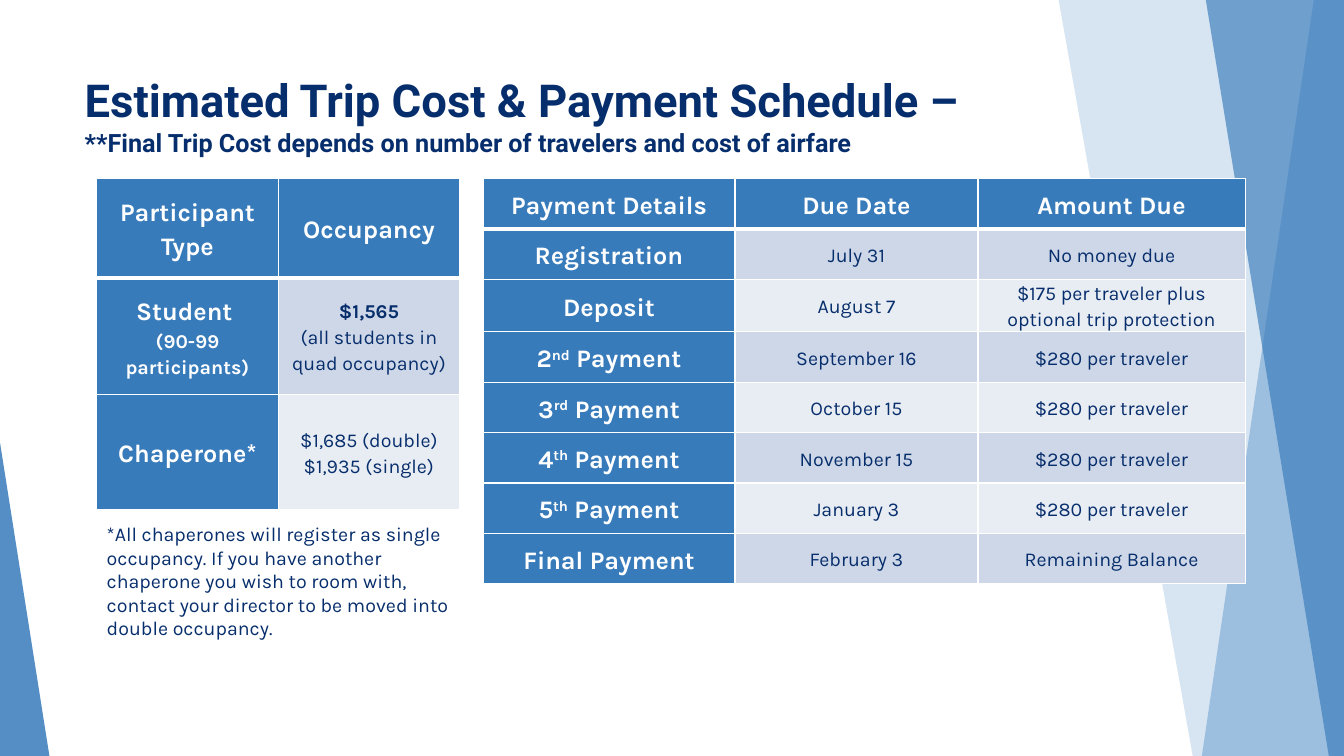
from copy import deepcopy
from dataclasses import dataclass

from lxml import etree
from pptx import Presentation
from pptx.dml.color import RGBColor
from pptx.enum.shapes import MSO_SHAPE
from pptx.enum.text import MSO_ANCHOR, PP_ALIGN
from pptx.oxml.ns import qn
from pptx.util import Inches, Pt

TRIANGLE = MSO_SHAPE.ISOSCELES_TRIANGLE
TOP, MIDDLE = MSO_ANCHOR.TOP, MSO_ANCHOR.MIDDLE
LEFT, CENTER = PP_ALIGN.LEFT, PP_ALIGN.CENTER


@dataclass(frozen=True)
class Theme:
    blue: str = "387BBB"
    sky: str = "84B0DA"
    navy: str = "072E6C"
    white: str = "FFFFFF"
    bands: tuple = ("CED7E7", "E8ECF3")
    title_font: str = "Roboto"
    body_font: str = "Karla"
    title_size: float = 32.4
    heading_size: float = 18
    body_size: float = 14


@dataclass(frozen=True)
class Span:
    text: str
    size: float
    color: str
    bold: bool = False
    raised: bool = False


class SlideBuilder:
    def __init__(self, page, theme):
        self.page = page
        self.theme = theme

    def heading(self, text, size=None, raised=False):
        return Span(text, size or self.theme.heading_size, self.theme.white, True, raised)

    def body(self, text, bold=False):
        return Span(text, self.theme.body_size, self.theme.navy, bold)

    def add_spans(self, para, spans, font_name, align=LEFT, spacing=1.0):
        para.alignment = align
        para.line_spacing = spacing
        for span in spans:
            for index, line in enumerate(span.text.split("\n")):
                if index:
                    # The break takes the style of the run before it
                    para.add_line_break()
                    para._p[-1].append(deepcopy(run._r.rPr))
                if not line:
                    continue
                run = para.add_run()
                run.text = line
                run.font.name = font_name
                run.font.size = Pt(span.size)
                run.font.bold = span.bold
                run.font.color.rgb = RGBColor.from_string(span.color)
                if span.raised:
                    run._r.get_or_add_rPr().set("baseline", "30000")

    def paint(self, shape, color, opacity):
        shape.shadow.inherit = False
        shape.line.fill.background()
        shape.fill.solid()
        shape.fill.fore_color.rgb = RGBColor.from_string(color)
        color_node = shape._element.spPr.find(qn("a:solidFill"))[0]
        etree.SubElement(color_node, qn("a:alpha")).set("val", str(opacity * 1000))

    def polygon(self, points, color, opacity):
        start, *others = [(Inches(x), Inches(y)) for x, y in points]
        outline = self.page.shapes.build_freeform(*start)
        outline.add_line_segments(others, close=True)
        self.paint(outline.convert_to_shape(), color, opacity)

    def corner_triangle(self, left, top, width, height, color, opacity):
        shape = self.page.shapes.add_shape(
            TRIANGLE, Inches(left), Inches(top), Inches(width), Inches(height))
        shape.adjustments[0] = 0
        self.paint(shape, color, opacity)

    def title(self, left, top, width, height, spans):
        box = self.page.shapes.title
        box.left, box.top = Inches(left), Inches(top)
        box.width, box.height = Inches(width), Inches(height)
        box.text_frame.vertical_anchor = TOP
        box.text_frame.word_wrap = True
        self.add_spans(box.text_frame.paragraphs[0], spans, self.theme.title_font)

    def note(self, left, top, width, height, text):
        box = self.page.shapes.add_textbox(
            Inches(left), Inches(top), Inches(width), Inches(height))
        box.text_frame.word_wrap = True
        self.add_spans(box.text_frame.paragraphs[0], [self.body(text)], self.theme.body_font)

    def border(self, cell, side, width):
        line = etree.SubElement(cell._tc.get_or_add_tcPr(), qn(f"a:ln{side}"))
        line.set("w", str(Pt(width)))
        fill = etree.SubElement(line, qn("a:solidFill"))
        etree.SubElement(fill, qn("a:srgbClr")).set("val", self.theme.white)

    def cell(self, cell, paragraphs, row, column):
        theme = self.theme
        cell.vertical_anchor = MIDDLE
        cell.margin_left = cell.margin_right = Inches(0.07)
        cell.margin_top = cell.margin_bottom = 0
        # The rule under the header row is thicker
        widths = {"L": 1, "R": 1, "T": 3 if row == 1 else 1, "B": 3 if row == 0 else 1}
        for side, width in widths.items():
            self.border(cell, side, width)
        is_heading = row == 0 or column == 0
        color = theme.blue if is_heading else theme.bands[(row - 1) % 2]
        cell.fill.solid()
        cell.fill.fore_color.rgb = RGBColor.from_string(color)
        frame = cell.text_frame
        for index, spans in enumerate(paragraphs):
            para = frame.add_paragraph() if index else frame.paragraphs[0]
            self.add_spans(para, spans, theme.body_font, CENTER, 1.15)

    def table(self, left, top, widths, heights, rows):
        table = self.page.shapes.add_table(
            len(heights), len(widths), Inches(left), Inches(top),
            Inches(sum(widths)), Inches(sum(heights))).table
        table.horz_banding = False
        for column, width in enumerate(widths):
            table.columns[column].width = Inches(width)
        for row, (height, contents) in enumerate(zip(heights, rows)):
            table.rows[row].height = Inches(height)
            for column, paragraphs in enumerate(contents):
                self.cell(table.cell(row, column), paragraphs, row, column)


def main():
    theme = Theme()
    deck = Presentation()
    deck.slide_width, deck.slide_height = Inches(13.33), Inches(7.5)
    slide = SlideBuilder(deck.slides.add_slide(deck.slide_layouts[5]), theme)
    heading, body = slide.heading, slide.body

    # Angled background bands
    for top_left, bottom_left, color, opacity in [
        (10.5, 11.83, theme.blue, 20),
        (13.03, 11.92, theme.sky, 70),
        (11.96, 13.18, theme.blue, 65),
    ]:
        slide.polygon([(top_left, 0), (13.33, 0), (13.33, 7.5), (bottom_left, 7.5)],
                      color, opacity)
    slide.corner_triangle(0, 4.39, 0.49, 3.11, theme.blue, 85)

    # Title
    slide.title(0.74, 0.67, 9.76, 1.44, [
        Span("Estimated Trip Cost & Payment Schedule –\n", theme.title_size, theme.navy, True),
        Span("**Final Trip Cost depends on number of travelers and cost of airfare",
             theme.heading_size, theme.navy, True),
    ])

    # Trip cost by participant
    costs = [
        [[[heading("Participant Type")]], [[heading("Occupancy")]]],
        [[[heading("Student ")], [heading("(90-99 participants)", theme.body_size)]],
         [[body("$1,565\n", bold=True), body("(all students in quad occupancy)")]]],
        [[[heading("Chaperone*")]], [[body("$1,685 (double)\n$1,935 (single)")]]],
    ]
    slide.table(0.96, 1.77, [1.8, 1.8], [0.99, 1.15, 1.15], costs)

    # Payment schedule
    payments = [
        ("Registration", "", "July 31", "No money due"),
        ("Deposit", "", "August 7", "$175 per traveler plus optional trip protection"),
        ("2", "nd", "September 16", "$280 per traveler"),
        ("3", "rd", "October 15", "$280 per traveler"),
        ("4", "th", "November 15", "$280 per traveler"),
        ("5", "th", "January 3", "$280 per traveler"),
        ("Final Payment", "", "February 3", "Remaining Balance"),
    ]
    schedule = [[[[heading(name)]] for name in ("Payment Details", "Due Date", "Amount Due")]]
    for name, ordinal, date, amount in payments:
        label = [heading(name)]
        if ordinal:
            label += [heading(ordinal, raised=True), heading(" Payment")]
        schedule.append([[label], [[body(date)]], [[body(amount)]]])
    slide.table(4.79, 1.77, [2.5, 2.41, 2.65], [0.5] * len(schedule), schedule)

    # Chaperone footnote
    slide.note(0.96, 5.13, 3.61, 1.58,
               "*All chaperones will register as single occupancy. If you have another "
               "chaperone you wish to room with, contact your director to be moved into "
               "double occupancy.")

    deck.save("out.pptx")


if __name__ == "__main__":
    main()
